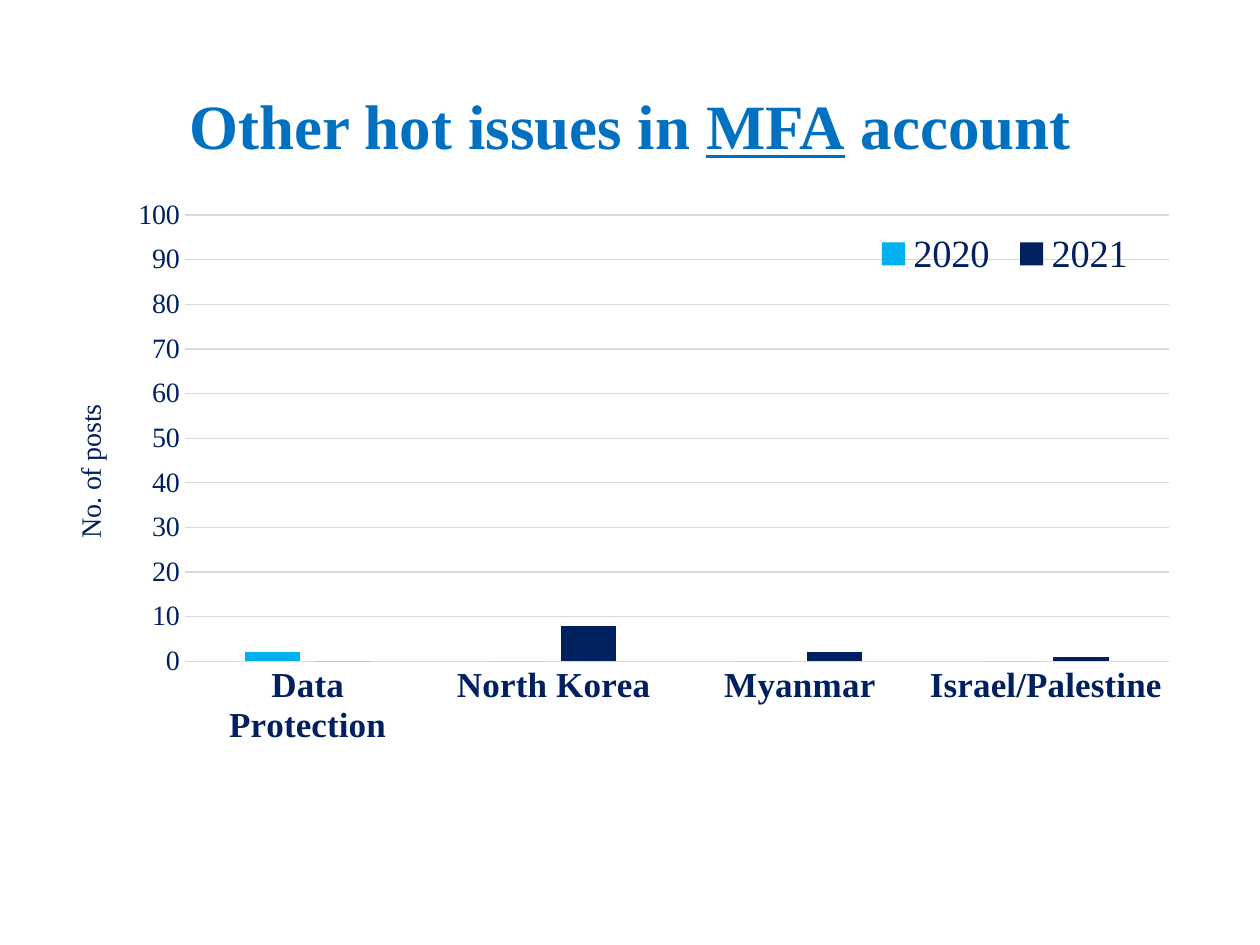
from lxml.etree import SubElement
from pptx import Presentation
from pptx.chart.data import CategoryChartData
from pptx.dml.color import RGBColor
from pptx.enum.chart import XL_CHART_TYPE, XL_LEGEND_POSITION, XL_TICK_MARK
from pptx.enum.text import MSO_ANCHOR, MSO_AUTO_SIZE, PP_ALIGN
from pptx.oxml.ns import qn
from pptx.util import Inches, Pt

WIDE, HIGH = Inches(10), Inches(7.5)
FACE = "Times New Roman"
BLUE, NAVY, SKY, GREY = "0070C0", "002060", "00B0F0", "D9D9D9"


def color(code):
    return RGBColor.from_string(code)


def style(font, size, code=NAVY, bold=False):
    font.name = FACE
    font.size = Pt(size)
    font.bold = bold
    font.color.rgb = color(code)


def write(para, text, size=16, code=NAVY, bold=False, under=None):
    run = para.add_run()
    run.text = text
    style(run.font, size, code, bold)
    run.font.underline = under


def place(item, left, top, width, height):
    item.left, item.width = int(left * WIDE), int(width * WIDE)
    item.top, item.height = int(top * HIGH), int(height * HIGH)


def layout(node, index, inner=False, **parts):
    for old in node.findall(qn("c:layout")):
        node.remove(old)
    frame = node.makeelement(qn("c:layout"))
    node.insert(index, frame)
    manual = SubElement(frame, qn("c:manualLayout"))
    rows = [("layoutTarget", "inner")] if inner else []
    rows += [("xMode", "edge"), ("yMode", "edge"), *parts.items()]
    for tag, value in rows:
        SubElement(manual, qn("c:" + tag)).set("val", str(value))


def rule(line):
    line.color.rgb = color(GREY)
    line.width = Pt(0.75)


def head(slide):
    title = slide.shapes.title
    place(title, 0.069, 0.084, 0.862, 0.105)
    frame = title.text_frame
    frame.word_wrap = True
    frame.auto_size = MSO_AUTO_SIZE.NONE
    frame.vertical_anchor = MSO_ANCHOR.MIDDLE
    para = frame.paragraphs[0]
    para.alignment = PP_ALIGN.CENTER
    para.line_spacing = 0.9
    for text, under in (("Other hot issues in ", None), ("MFA", True), (" account", None)):
        write(para, text, size=36, code=BLUE, bold=True, under=under)


def axes(chart):
    cat, val = chart.category_axis, chart.value_axis
    for axis, size, bold in ((cat, 20, True), (val, 16, False)):
        axis.major_tick_mark = axis.minor_tick_mark = XL_TICK_MARK.NONE
        style(axis.tick_labels.font, size, bold=bold)
    rule(cat.format.line)
    val.format.line.fill.background()
    val.minimum_scale, val.maximum_scale, val.major_unit = 0, 100, 10
    val.has_major_gridlines = True
    rule(val.major_gridlines.format.line)
    title = val.axis_title
    frame = title.text_frame
    write(frame.paragraphs[0], "No. of posts")
    frame._txBody.bodyPr.set("rot", "-5400000")
    frame._txBody.bodyPr.set("vert", "horz")
    layout(title._element, 1, x=0.02, y=0.31)


def legend(chart):
    chart.has_legend = True
    key = chart.legend
    key.position = XL_LEGEND_POSITION.TOP
    key.include_in_layout = False
    style(key.font, 22)
    layout(key._element, 1, x=0.7, y=0.06, w=0.24, h=0.09)


def graph(slide):
    data = CategoryChartData()
    data.categories = ["Data Protection", "North Korea", "Myanmar", "Israel/Palestine"]
    data.add_series("2020", (2, 0, 0, 0))
    data.add_series("2021", (0, 8, 2, 1))
    item = slide.shapes.add_chart(XL_CHART_TYPE.COLUMN_CLUSTERED, 0, 0, WIDE, HIGH, data)
    place(item, 0.035, 0.19, 0.93, 0.75)
    chart = item.chart
    chart.has_title = False
    style(chart.font, 16)
    plot = chart.plots[0]
    plot.gap_width, plot.overlap = 219, -27
    plot.vary_by_categories = False
    for bars, code in zip(plot.series, (SKY, NAVY)):
        bars.format.fill.solid()
        bars.format.fill.fore_color.rgb = color(code)
    axes(chart)
    legend(chart)
    area = chart._chartSpace.find(".//" + qn("c:plotArea"))
    layout(area, 0, inner=True, x=0.12, y=0.05, w=0.84, h=0.63)


def main():
    deck = Presentation()
    deck.slide_width, deck.slide_height = WIDE, HIGH
    slide = deck.slides.add_slide(deck.slide_layouts[5])
    head(slide)
    graph(slide)
    deck.save("out.pptx")


if __name__ == "__main__":
    main()
